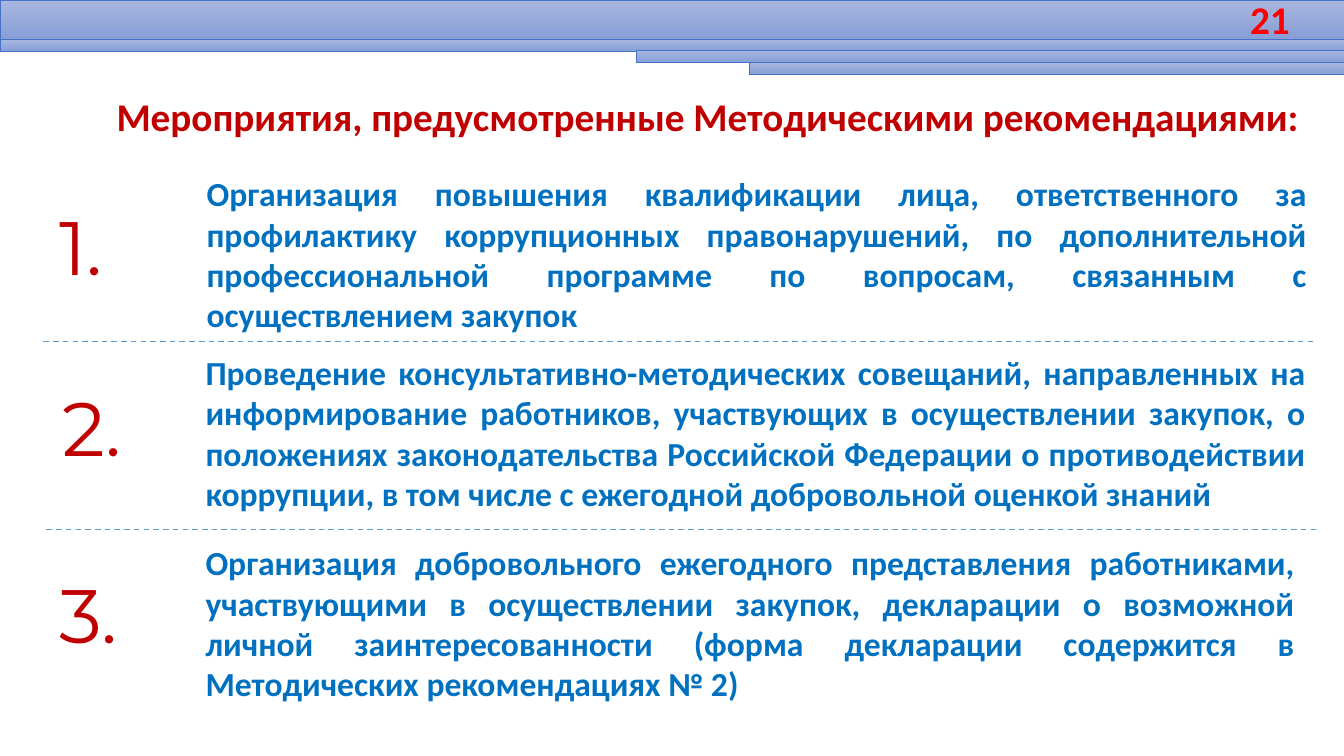
from dataclasses import dataclass

from lxml import etree
from pptx import Presentation
from pptx.dml.color import RGBColor
from pptx.enum.dml import MSO_LINE
from pptx.enum.shapes import MSO_CONNECTOR, MSO_SHAPE
from pptx.enum.text import MSO_ANCHOR, MSO_AUTO_SIZE, PP_ALIGN
from pptx.oxml.ns import qn
from pptx.slide import Slide
from pptx.util import Inches, Pt

RECTANGLE = MSO_SHAPE.RECTANGLE
STRAIGHT = MSO_CONNECTOR.STRAIGHT
DASH = MSO_LINE.DASH
TOP, MIDDLE = MSO_ANCHOR.TOP, MSO_ANCHOR.MIDDLE
LEFT, CENTER, RIGHT, JUSTIFY = (
    PP_ALIGN.LEFT, PP_ALIGN.CENTER, PP_ALIGN.RIGHT, PP_ALIGN.JUSTIFY)
NO_AUTOFIT = MSO_AUTO_SIZE.NONE

COLORS = {
    "band_top": "A8B7DF",
    "band_bottom": "889ED7",
    "band_line": "4472C4",
    "page": "FF0000",
    "accent": "C00000",
    "body": "0070C0",
    "divider": "5B9BD5",
}
SLIDE_WIDTH = 13.33


def color(name):
    return RGBColor.from_string(COLORS[name])


@dataclass
class SlideBuilder:
    slide: Slide
    text_font: str = "Calibri"
    number_font: str = "Montserrat"

    def band(self, left, top, height):
        band = self.slide.shapes.add_shape(
            RECTANGLE, Inches(left), Inches(top),
            Inches(SLIDE_WIDTH - left), Inches(height))
        band.shadow.inherit = False
        band.fill.gradient()
        band.fill.gradient_angle = 270
        for stop, name in zip(band.fill.gradient_stops, ("band_top", "band_bottom")):
            stop.color.rgb = color(name)
        band.line.color.rgb = color("band_line")
        band.line.width = Pt(0.5)

    def divider(self, left, top, width):
        divider = self.slide.shapes.add_connector(
            STRAIGHT, Inches(left), Inches(top), Inches(left + width), Inches(top))
        divider.line.color.rgb = color("divider")
        divider.line.width = Pt(1)
        divider.line.dash_style = DASH
        etree.SubElement(divider.element.spPr, qn("a:effectLst"))

    def style_text(self, frame, words, size, tint, align, anchor, font, bold):
        frame.text = words
        frame.word_wrap = True
        frame.auto_size = NO_AUTOFIT
        frame.vertical_anchor = anchor
        paragraph = frame.paragraphs[0]
        paragraph.alignment = align
        paragraph.line_spacing = 1.0
        run_font = paragraph.runs[0].font
        run_font.name = font
        run_font.size = Pt(size)
        run_font.bold = bold
        run_font.color.rgb = color(tint)

    def title(self, words, left, top, width, height):
        heading = self.slide.shapes.title
        heading.left, heading.top = Inches(left), Inches(top)
        heading.width, heading.height = Inches(width), Inches(height)
        self.style_text(heading.text_frame, words, 28, "accent", CENTER, TOP,
                        self.text_font, True)

    def text(self, words, box, size, tint, align, anchor=MIDDLE, font=None, bold=True):
        label = self.slide.shapes.add_textbox(*(Inches(length) for length in box))
        self.style_text(label.text_frame, words, size, tint, align, anchor,
                        font or self.text_font, bold)

    def measure(self, number, number_at, words, words_box):
        self.text(f"{number}.", (*number_at, 1.25, 1.01), 54, "accent", LEFT, TOP,
                  self.number_font, False)
        self.text(words, words_box, 24, "body", JUSTIFY)


BANDS = [(0, 0, 0.39), (0, 0.39, 0.12), (6.31, 0.5, 0.12), (7.43, 0.62, 0.12)]
DIVIDERS = [(0.43, 3.39), (0.46, 5.25)]
MEASURES = [
    ((0.49, 1.93), "Организация повышения квалификации лица, ответственного за "
     "профилактику коррупционных правонарушений, по дополнительной "
     "профессиональной программе по вопросам, связанным с осуществлением закупок",
     (1.95, 2.22, 11.11, 0.6)),
    ((0.52, 3.73), "Проведение консультативно-методических совещаний, направленных на "
     "информирование работников, участвующих в осуществлении закупок, о "
     "положениях законодательства Российской Федерации о противодействии "
     "коррупции, в том числе с ежегодной добровольной оценкой знаний",
     (1.94, 3.99, 11.11, 0.6)),
    ((0.49, 5.58), "Организация добровольного ежегодного представления работниками, "
     "участвующими в осуществлении закупок, декларации о возможной личной "
     "заинтересованности (форма декларации содержится в Методических "
     "рекомендациях № 2)",
     (1.94, 5.32, 11, 1.72)),
]


def main():
    deck = Presentation()
    deck.slide_width, deck.slide_height = Inches(SLIDE_WIDTH), Inches(7.5)
    builder = SlideBuilder(deck.slides.add_slide(deck.slide_layouts[5]))
    for band in BANDS:
        builder.band(*band)
    builder.text("21", (12, 0, 0.89, 0.38), 28, "page", RIGHT)
    builder.title("Мероприятия, предусмотренные Методическими рекомендациями:",
                  0.95, 0.87, 12.13, 0.57)
    for left, top in DIVIDERS:
        builder.divider(left, top, 12.61)
    for number, measure in enumerate(MEASURES, start=1):
        builder.measure(number, *measure)
    deck.save("out.pptx")


if __name__ == "__main__":
    main()
